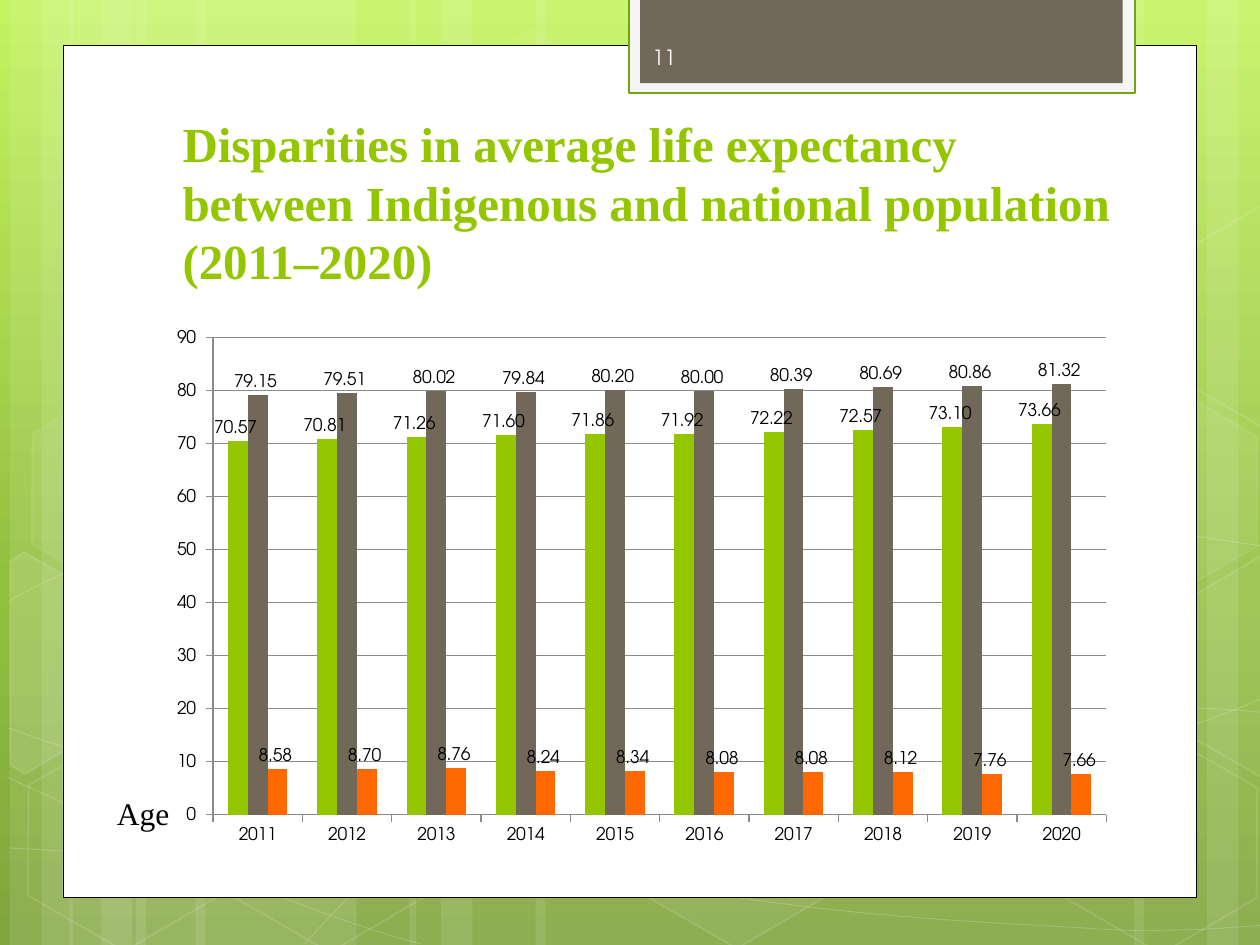
from math import cos, radians, sin

from pptx import Presentation
from pptx.chart.data import CategoryChartData
from pptx.dml.color import RGBColor
from pptx.enum.chart import XL_CHART_TYPE, XL_LABEL_POSITION, XL_TICK_MARK
from pptx.enum.shapes import MSO_SHAPE
from pptx.enum.text import MSO_ANCHOR
from pptx.oxml import parse_xml
from pptx.oxml.ns import nsdecls, qn
from pptx.util import Cm, Pt

RECTANGLE, HEXAGON = MSO_SHAPE.RECTANGLE, MSO_SHAPE.HEXAGON
COLUMNS = XL_CHART_TYPE.COLUMN_CLUSTERED
OUTSIDE_END, TICK_OUT = XL_LABEL_POSITION.OUTSIDE_END, XL_TICK_MARK.OUTSIDE
TOP, MIDDLE = MSO_ANCHOR.TOP, MSO_ANCHOR.MIDDLE
SERIF, SANS = "Times New Roman", "TeX Gyre Adventor"
WHITE, BLACK, GREEN, BROWN, ORANGE = "FFFFFF", "000000", "94C600", "71685A", "FF6700"
TILT = 30

# Background stripes: left, width
STRIPES = [(1.08, 1.75), (0.08, 0.5), (0.33, 0.83), (1.55, 1.75), (0.55, 0.5), (0.8, 0.83),
           (7.33, 1.75), (9.58, 0.5), (9, 0.83), (4.25, 3.08), (3.25, 0.5), (3.5, 0.83)]

# Thin waves: a start point, then two control points and an end point per segment
WAVES = [
    [(0.07, 6.73), (0.61, 6.76), (1.15, 6.79), (1.9, 6.78), (2.65, 6.77), (3.58, 6.75),
     (4.58, 6.65), (5.58, 6.55), (7, 6.36), (7.92, 6.17), (8.83, 5.98), (9.77, 5.68),
     (10.07, 5.51)],
    [(0.07, 4.77), (0.36, 4.61), (0.65, 4.46), (1.21, 4.31), (1.78, 4.16), (2.59, 3.94),
     (3.47, 3.87), (4.36, 3.8), (5.44, 3.79), (6.54, 3.87), (7.64, 3.95), (9.47, 4.26),
     (10.07, 4.34)],
    [(0.06, 6.17), (1.27, 6.72), (2.47, 7.27), (3.34, 7.49)],
    [(0.07, 5.78), (0.38, 5.89), (0.7, 6), (1.28, 6.16), (1.86, 6.31), (2.73, 6.56),
     (3.57, 6.73), (4.4, 6.9), (5.45, 7.08), (6.28, 7.18), (7.11, 7.29), (8, 7.33),
     (8.53, 7.36), (9.05, 7.4), (9.19, 7.38), (9.45, 7.38), (9.71, 7.37), (9.89, 7.35),
     (10.07, 7.34)],
    [(2.42, 7.49), (2.6, 7.29), (2.78, 7.09), (3.02, 6.91), (3.26, 6.73), (3.6, 6.53),
     (3.88, 6.39), (4.16, 6.25), (4.33, 6.19), (4.7, 6.09), (5.06, 5.99), (5.73, 5.85),
     (6.08, 5.78), (6.44, 5.71), (6.49, 5.71), (6.8, 5.69), (7.11, 5.66), (7.6, 5.63),
     (7.94, 5.62), (8.29, 5.61), (8.86, 5.62), (8.86, 5.62), (9.08, 5.62), (9.31, 5.62),
     (9.53, 5.62), (9.71, 5.63), (9.88, 5.64), (9.97, 5.65), (10.06, 5.66), (10.03, 5.65),
     (10.06, 5.66)],
]

# Hexagons: left, top, fill opacity, line opacity
HEXAGONS = [(3.34, 0.36, 4, 8), (4.97, 5.89, 6, 12), (0.11, 5.91, 0, 12),
            (0.14, 3.12, 7, 8), (1.74, 5.92, 0, 12), (7.53, 4.53, 10, 12),
            (8.34, 5.93, 0, 12), (8.34, 3.14, 7, 8)]

# Hexagons cut by the slide edge: fill opacity, centre, corners as seen after the tilt
CUT_HEXAGONS = [
    (10, (0.36, 5.35),
     [(0.08, 4.45), (0.19, 4.38), (0.96, 4.82), (0.95, 5.7), (0.2, 6.14), (0.08, 6.07)]),
    (4, (9.85, 5.2),
     [(9.26, 4.85), (10.01, 4.41), (10.09, 4.46), (10.09, 6.13), (10.02, 6.17), (9.26, 5.73)]),
    (0, (9.85, 2.41),
     [(9.26, 2.07), (10.01, 1.63), (10.1, 1.68), (10.09, 3.35), (10.02, 3.39), (9.26, 2.95)]),
]

YEARS = [str(year) for year in range(2011, 2021)]
SERIES = [
    ("Series 1", GREEN, [70.57, 70.81, 71.26, 71.6, 71.86, 71.92, 72.22, 72.57, 73.1, 73.66]),
    ("Series 2", BROWN, [79.15, 79.51, 80.02, 79.84, 80.2, 80, 80.39, 80.69, 80.86, 81.32]),
    ("Series 3", ORANGE, [8.58, 8.7, 8.76, 8.24, 8.34, 8.08, 8.08, 8.12, 7.76, 7.66]),
]


def color(value):
    return RGBColor.from_string(value)


def lengths(*inches):
    return [Cm(value * 2.54) for value in inches]


def turn_back(point, center, degrees):
    """The place of a point before its shape is rotated around the centre."""
    x, y = point[0] - center[0], point[1] - center[1]
    c, s = cos(radians(degrees)), sin(radians(degrees))
    return center[0] + x * c + y * s, center[1] - x * s + y * c


class SlideBuilder:
    def __init__(self, presentation):
        self.slide = presentation.slides.add_slide(presentation.slide_layouts[6])
        self.shapes = self.slide.shapes

    def background(self, stops):
        marks = "".join(f'<a:gs pos="{position * 1000}"><a:srgbClr val="{value}"/></a:gs>'
                        for position, value in stops)
        self.slide.element.cSld.insert(0, parse_xml(
            f'<p:bg {nsdecls("p", "a")}><p:bgPr><a:gradFill rotWithShape="1">'
            f'<a:gsLst>{marks}</a:gsLst><a:lin ang="5400000" scaled="0"/></a:gradFill>'
            '<a:effectLst/></p:bgPr></p:bg>'))

    def paint(self, fill, value, opacity):
        if not opacity:
            fill.background()
            return
        fill.solid()
        fill.fore_color.rgb = color(value)
        if opacity < 100:
            # The newest color element of this shape is the one without an alpha
            for element in self.shapes[-1].element.spPr.iter(qn("a:srgbClr")):
                if len(element) == 0:
                    element.append(parse_xml(
                        f'<a:alpha {nsdecls("a")} val="{opacity * 1000}"/>'))

    def style(self, shape, fill=WHITE, opacity=100, line=WHITE, width=0, line_opacity=100):
        shape.shadow.inherit = False
        self.paint(shape.fill, fill, opacity)
        self.paint(shape.line.fill, line, line_opacity if width else 0)
        if width:
            shape.line.width = Pt(width)

    def preset(self, kind, box, rotation=0, **look):
        shape = self.shapes.add_shape(kind, *lengths(*box))
        shape.rotation = rotation
        self.style(shape, **look)
        return shape

    def outline(self, points, close, **look):
        corners = [lengths(*point) for point in points]
        builder = self.shapes.build_freeform(*corners[0])
        builder.add_line_segments(corners[1:], close=close)
        shape = builder.convert_to_shape()
        self.style(shape, **look)
        return shape

    def curve(self, points, **look):
        shape = self.outline(points, False, **look)
        outline = shape.element.find(".//" + qn("a:path"))
        lines = outline.findall(qn("a:lnTo"))
        # Every three points become one cubic segment
        for first in range(0, len(lines), 3):
            segment = parse_xml(f'<a:cubicBezTo {nsdecls("a")}/>')
            for line in lines[first:first + 3]:
                segment.append(line[0])
                outline.remove(line)
            outline.append(segment)

    def text(self, box, lines, value, anchor=TOP, wrap=True, **font):
        frame = self.shapes.add_textbox(*lengths(*box)).text_frame
        frame.word_wrap = wrap
        frame.vertical_anchor = anchor
        for index, line in enumerate(lines):
            paragraph = frame.add_paragraph() if index else frame.paragraphs[0]
            run = paragraph.add_run()
            run.text = line
            run.font.color.rgb = color(value)
            for name, setting in font.items():
                setattr(run.font, name, setting)

    def column_chart(self, box, categories, series_list, plot_area):
        data = CategoryChartData()
        data.categories = categories
        for name, _, values in series_list:
            data.add_series(name, values)
        chart = self.shapes.add_chart(COLUMNS, *lengths(*box), data).chart
        chart.has_legend = chart.has_title = False
        chart.font.size, chart.font.name = Pt(10), SANS
        chart.font.color.rgb = color(BLACK)
        # Axes
        value_axis, category_axis = chart.value_axis, chart.category_axis
        value_axis.minimum_scale, value_axis.maximum_scale, value_axis.major_unit = 0, 90, 10
        value_axis.has_major_gridlines = True
        value_axis.tick_labels.number_format = r"0_);\(0\)"
        value_axis.tick_labels.number_format_is_linked = False
        for axis in (value_axis, category_axis):
            axis.major_tick_mark = TICK_OUT
        for part in (value_axis, category_axis, value_axis.major_gridlines):
            part.format.line.color.rgb = color("8A8A8A")
        # Columns and their labels
        plot = chart.plots[0]
        plot.gap_width, plot.overlap, plot.vary_by_categories = 150, 0, False
        settings = {"show_value": True, "position": OUTSIDE_END,
                    "number_format": r"0.00_);[Red]\(0.00\)", "number_format_is_linked": False}
        for series, (_, value, _) in zip(plot.series, series_list):
            series.format.fill.solid()
            series.format.fill.fore_color.rgb = color(value)
            for name, setting in settings.items():
                setattr(series.data_labels, name, setting)
        # Fixed place of the inner plot area
        area = chart.element.find(".//" + qn("c:plotArea"))
        for layout in area.findall(qn("c:layout")):
            area.remove(layout)
        places = "".join(f'<c:{name} val="{value}"/>' for name, value in zip("xywh", plot_area))
        area.insert(0, parse_xml(
            f'<c:layout {nsdecls("c")}><c:manualLayout><c:layoutTarget val="inner"/>'
            f'<c:xMode val="edge"/><c:yMode val="edge"/>{places}</c:manualLayout></c:layout>'))


def main():
    presentation = Presentation()
    presentation.slide_width, presentation.slide_height = lengths(10, 7.5)
    builder = SlideBuilder(presentation)
    # Decorated background
    builder.background([(0, "C3F35F"), (62, "93BF3F"), (100, "81A53E")])
    for left, width in STRIPES:
        builder.preset(RECTANGLE, (left, 0, width, 7.5), opacity=10)
    for wave in WAVES:
        builder.curve(wave, opacity=0, width=0.5, line_opacity=20)
    for left, top, opacity, line_opacity in HEXAGONS:
        hexagon = builder.preset(HEXAGON, (left, top, 1.75, 1.52), TILT, opacity=opacity,
                                 width=1, line_opacity=line_opacity)
        hexagon.adjustments[0] = 0.285
    for opacity, center, corners in CUT_HEXAGONS:
        level = [turn_back(corner, center, TILT) for corner in corners]
        builder.outline(level, True, opacity=opacity, width=1, line_opacity=12).rotation = TILT
    # White panel and page tab
    builder.preset(RECTANGLE, (0.5, 0.36, 9, 6.76), line=BLACK, width=0.5)
    builder.preset(RECTANGLE, (4.99, -0.02, 4.02, 0.76), fill="F5F5F5", line="74A510", width=1.25)
    builder.preset(RECTANGLE, (5.08, -0.02, 3.83, 0.68), fill=BROWN)
    # Texts
    builder.text((0.83, 6.25, 0.72, 0.4), ["Age"], BLACK, name=SERIF, size=Pt(18))
    builder.text((5.08, 0.25, 1.46, 0.4), ["11"], "FEFEFE", MIDDLE, name=SANS, size=Pt(12))
    builder.text((1.35, 0.85, 7.65, 1.51),
                 ["Disparities in average life expectancy",
                  "between Indigenous and national population", "(2011–2020)"],
                 GREEN, wrap=False, name=SERIF, size=Pt(28), bold=True)
    # Life expectancy chart
    builder.column_chart((1.38, 2.56, 7.59, 4.18), YEARS, SERIES, (0.041, 0.029, 0.934, 0.906))
    presentation.save("out.pptx")


if __name__ == "__main__":
    main()
